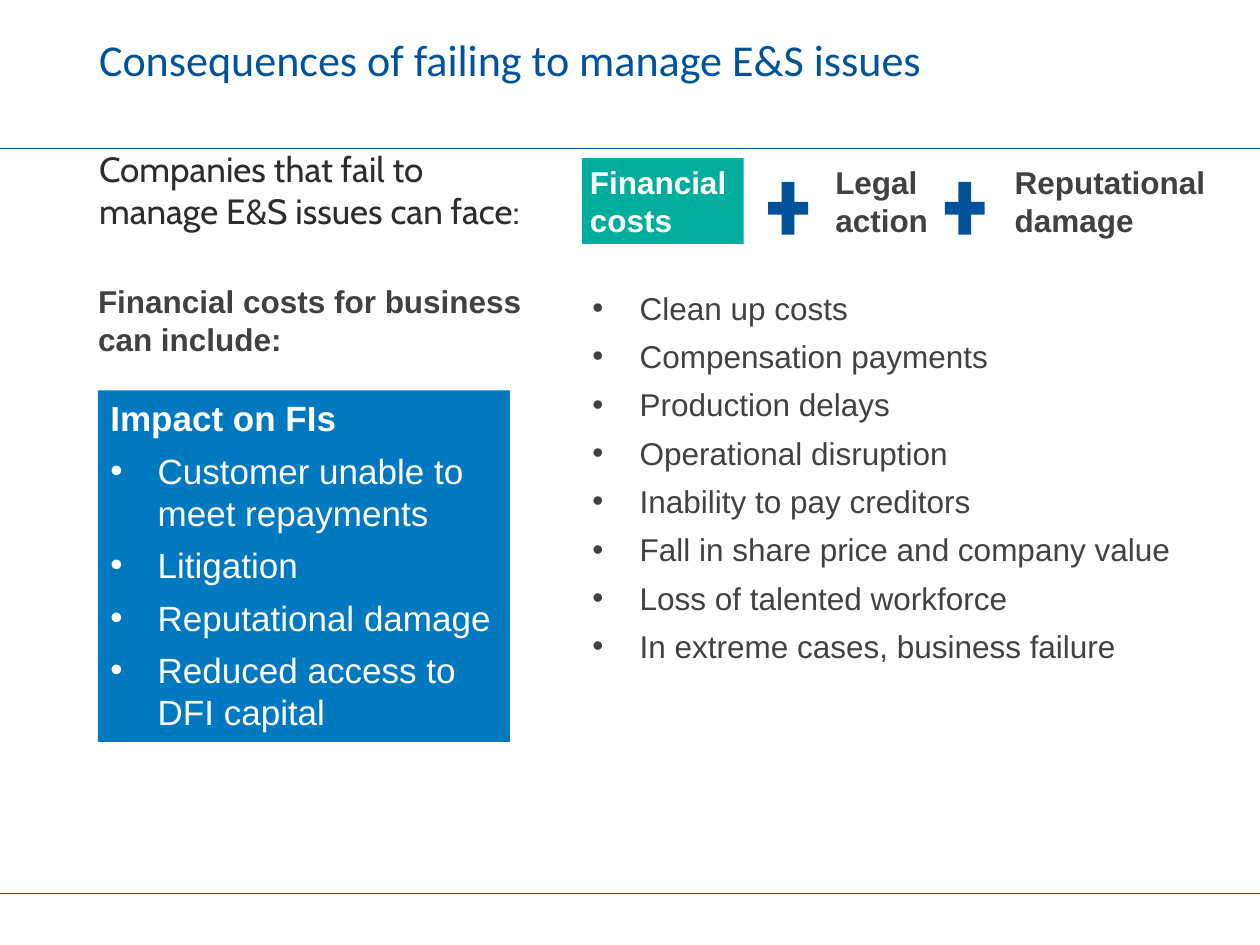
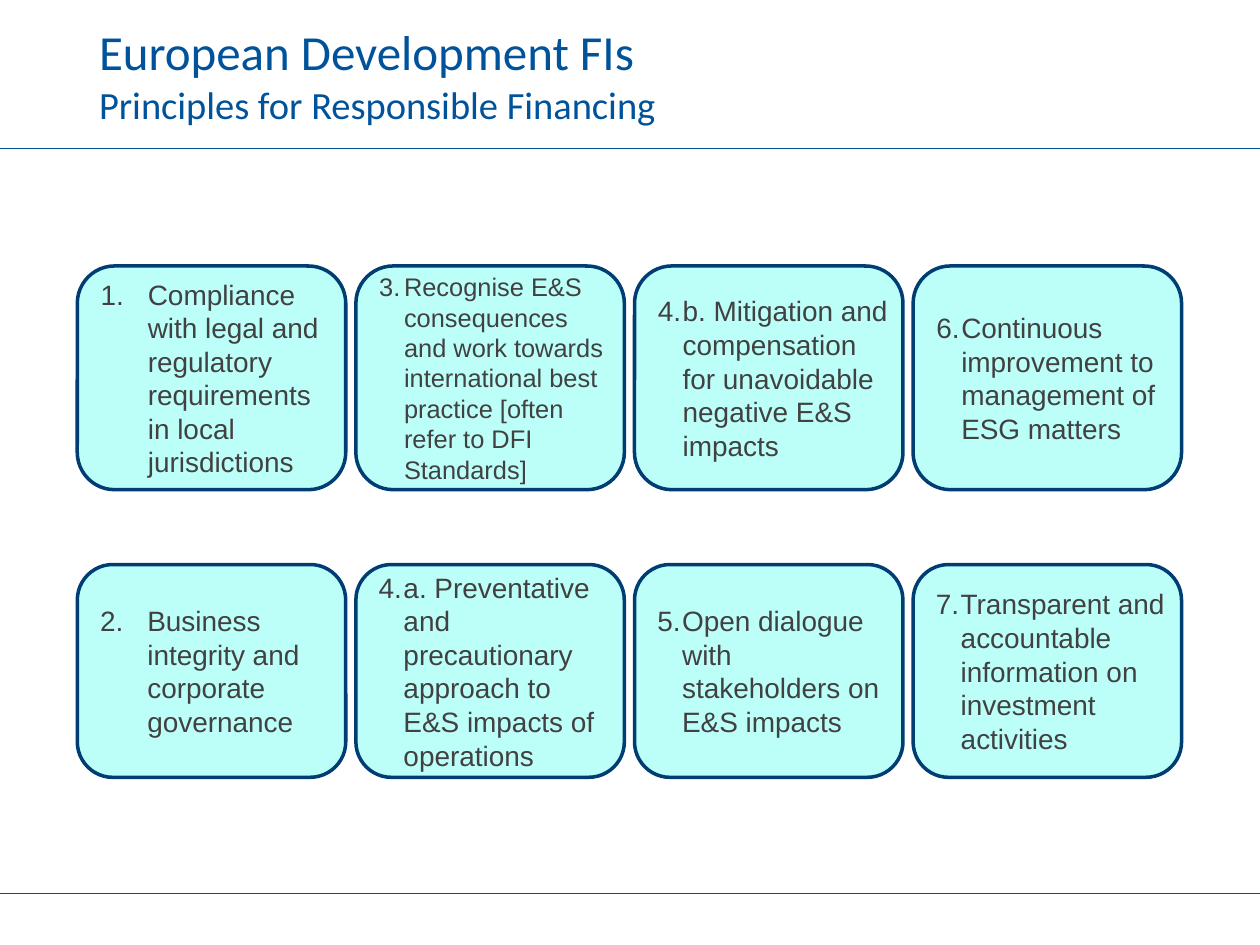
"""Build two slides on environmental and social risk for financial institutions."""
import pptx
import pptx.dml.color
import pptx.enum.shapes
import pptx.enum.text
import pptx.oxml.ns
import pptx.util
from lxml import etree

Pt = pptx.util.Pt
SHAPES = pptx.enum.shapes.MSO_SHAPE
ANCHOR = pptx.enum.text.MSO_ANCHOR
ALIGN = pptx.enum.text.PP_ALIGN

CONSEQUENCES_TITLE = [("Consequences of failing to manage E&S issues", 25.2)]
INTRO = "Companies that fail to\nmanage E&S issues can face:"
RISKS = [
    ("Financial\ncosts", 332.6, 92.4),
    ("Legal\naction", 472.8, 118),
    ("Reputational\ndamage", 575.3, 118),
]
PLUS_LEFTS = [434.9, 535.8]
COSTS_HEADING = "Financial costs for business can include:"
COSTS = [
    "Clean up costs",
    "Compensation payments",
    "Production delays",
    "Operational disruption",
    "Inability to pay creditors",
    "Fall in share price and company value",
    "Loss of talented workforce",
    "In extreme cases, business failure",
]
IMPACT_HEADING = "Impact on FIs"
IMPACTS = [
    "Customer unable to meet repayments",
    "Litigation",
    "Reputational damage",
    "Reduced access to DFI capital",
]

PRINCIPLES_TITLE = [("European Development FIs", 28), ("Principles for Responsible Financing", 22)]
PRINCIPLES = [
    [(1, "Compliance with legal and regulatory requirements in local jurisdictions"),
     (3, "Recognise E&S consequences and work towards international best practice "
         "[often refer to DFI Standards]"),
     (4, "b. Mitigation and compensation for unavoidable negative E&S impacts"),
     (6, "Continuous improvement to management of ESG matters")],
    [(2, "Business integrity and corporate governance"),
     (4, "a. Preventative and precautionary approach to E&S impacts of operations"),
     (5, "Open dialogue with stakeholders on E&S impacts"),
     (7, "Transparent and accountable information on investment activities")],
]

COLORS = {
    "rule": "005198", "title": "00539B", "intro": "2C2C2D", "text": "414141",
    "white": "FFFFFF", "active": "00AE9E", "impact": "0079C1",
    "card": "BCFFF9", "card_edge": "003D73",
}
TITLE = {"name": "Calibri", "color": "title"}
INTRO_STYLE = {"name": "Cabin", "size": 20, "color": "intro"}
BODY = {"name": "Arial", "size": 18, "color": "text"}
BOLD = {**BODY, "bold": True}
CARD = {**BODY, "size": 16}
LONG_CARD = {**BODY, "size": 14.5}
LONG_CARD_LENGTH = 90
IMPACT = {**BODY, "size": 20, "color": "white"}
FLUSH = (0, 0, 0, 0)
PADDED = (7.2, 3.6, 7.2, 3.6)
LABEL_INSETS = (4.5, 3, 4.5, 3)
CARD_INSETS = (7.2, 3.6, 0, 3.6)
HANGING = 27
NARROW_HANGING = 14.2

SLIDE_WIDTH, SLIDE_HEIGHT = 720, 540
RULE_TOPS = [85, 510.5]
MARGIN = 56.6
CARD_LEFT, CARD_WIDTH, CARD_PITCH = 44.2, 153.4, 159.2
CARD_ROWS = [(152, 127.8), (322.6, 121.6)]


def rgb(color):
    return pptx.dml.color.RGBColor.from_string(COLORS[color])


def add_box(slide, place, fill, kind=SHAPES.RECTANGLE, edge=None):
    box = slide.shapes.add_shape(kind, *map(Pt, place))
    box.shadow.inherit = False
    box.fill.solid()
    box.fill.fore_color.rgb = rgb(fill)
    if edge:
        box.line.color.rgb = rgb(edge)
        box.line.width = Pt(2)
    else:
        box.line.fill.background()
    return box


def add_text(slide, place):
    return slide.shapes.add_textbox(*map(Pt, place))


def set_marker(paragraph, hanging, marker):
    properties = paragraph._p.get_or_add_pPr()
    properties.set("marL", str(Pt(hanging)))
    properties.set("indent", str(-Pt(hanging)))
    qn = pptx.oxml.ns.qn
    if marker is None:
        return
    etree.SubElement(properties, qn("a:buFont"), typeface="Arial")
    if marker == "•":
        etree.SubElement(properties, qn("a:buChar"), char=marker)
    else:
        etree.SubElement(properties, qn("a:buAutoNum"), type="arabicPeriod", startAt=str(marker))


def write(shape, lines, insets=FLUSH, anchor=ANCHOR.TOP, hanging=0, space_after=0):
    """Fill a shape with lines of (text, style, marker)."""
    frame = shape.text_frame
    sides = ("margin_left", "margin_top", "margin_right", "margin_bottom")
    settings = {"word_wrap": True, "vertical_anchor": anchor, **dict(zip(sides, map(Pt, insets)))}
    for name, value in settings.items():
        setattr(frame, name, value)
    for index, (text, style, marker) in enumerate(lines):
        paragraph = frame.add_paragraph() if index else frame.paragraphs[0]
        paragraph.text = text
        paragraph.alignment = ALIGN.LEFT
        paragraph.space_after = Pt(space_after)
        if hanging:
            set_marker(paragraph, hanging, marker)
        for run in paragraph.runs:
            for name, value in style.items():
                if name == "color":
                    run.font.color.rgb = rgb(value)
                else:
                    setattr(run.font, name, Pt(value) if name == "size" else value)


def add_slide(deck, title, title_height):
    slide = deck.slides.add_slide(deck.slide_layouts[6])
    for top in RULE_TOPS:
        rule = slide.shapes.add_connector(
            pptx.enum.shapes.MSO_CONNECTOR.STRAIGHT, 0, Pt(top), Pt(SLIDE_WIDTH), Pt(top))
        rule.line.color.rgb = rgb("rule")
        rule.line.width = Pt(0.25)
        etree.SubElement(rule._element.spPr, pptx.oxml.ns.qn("a:effectLst"))
    write(add_text(slide, (MARGIN, 0, 518, title_height)),
          [(text, {**TITLE, "size": size}, None) for text, size in title], anchor=ANCHOR.MIDDLE)
    return slide


def build_consequences(deck):
    slide = add_slide(deck, CONSEQUENCES_TITLE, 67)
    write(add_text(slide, (MARGIN, 84.4, 260, 55)), [(INTRO, INTRO_STYLE, None)])
    for index, (risk, left, width) in enumerate(RISKS):
        place = (left, 90.4, width, 49)
        label = add_text(slide, place) if index else add_box(slide, place, "active")
        style = BOLD if index else {**BOLD, "color": "white"}
        write(label, [(risk, style, None)], LABEL_INSETS, ANCHOR.MIDDLE)
    for left in PLUS_LEFTS:
        add_box(slide, (left, 98.6, 31, 41), "title", SHAPES.MATH_PLUS)
    write(add_text(slide, (56, 161.4, 270, 44)), [(COSTS_HEADING, BOLD, None)])
    write(add_text(slide, (331.4, 161.4, 373, 224)), [(cost, BODY, "•") for cost in COSTS],
          PADDED, hanging=HANGING, space_after=6)
    impact_lines = [(IMPACT_HEADING, {**IMPACT, "bold": True}, None)]
    impact_lines += [(impact, IMPACT, "•") for impact in IMPACTS]
    write(add_box(slide, (56, 223, 235.4, 201), "impact"), impact_lines,
          PADDED, hanging=HANGING, space_after=6)


def build_principles(deck):
    slide = add_slide(deck, PRINCIPLES_TITLE, 85)
    for (top, height), row in zip(CARD_ROWS, PRINCIPLES):
        for column, (number, principle) in enumerate(row):
            place = (CARD_LEFT + column * CARD_PITCH, top, CARD_WIDTH, height)
            card = add_box(slide, place, "card", SHAPES.ROUNDED_RECTANGLE, "card_edge")
            style = LONG_CARD if len(principle) > LONG_CARD_LENGTH else CARD
            write(card, [(principle, style, number)], CARD_INSETS, ANCHOR.MIDDLE,
                  NARROW_HANGING if column else HANGING)


def main():
    deck = pptx.Presentation()
    deck.slide_width, deck.slide_height = Pt(SLIDE_WIDTH), Pt(SLIDE_HEIGHT)
    build_consequences(deck)
    build_principles(deck)
    deck.save("out.pptx")


if __name__ == "__main__":
    main()
